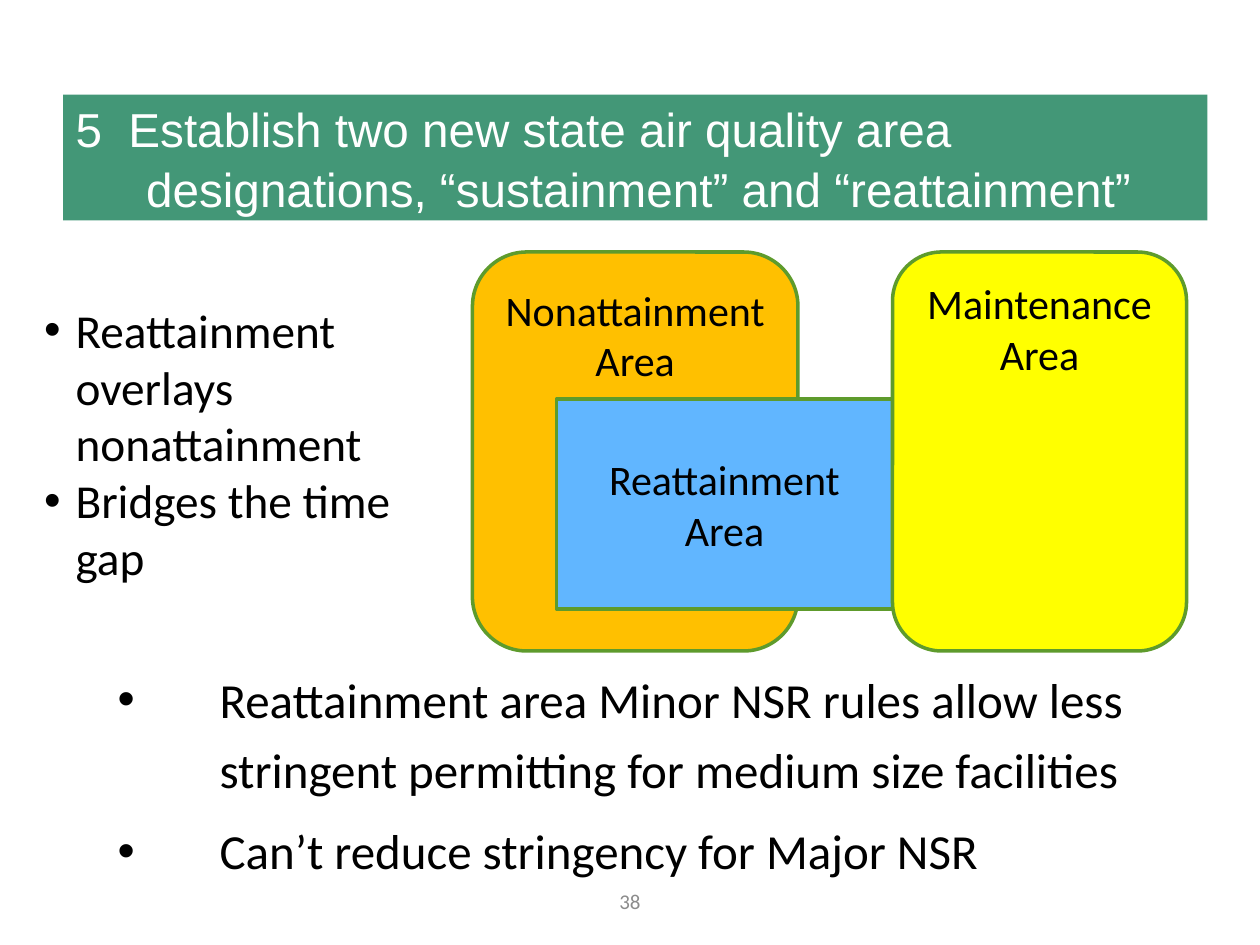
from lxml import etree
from pptx import Presentation
from pptx.dml.color import RGBColor
from pptx.enum.shapes import MSO_SHAPE
from pptx.enum.text import MSO_ANCHOR, MSO_AUTO_SIZE, PP_ALIGN
from pptx.oxml.ns import qn
from pptx.util import Inches, Pt

RECT, ROUND = MSO_SHAPE.RECTANGLE, MSO_SHAPE.ROUNDED_RECTANGLE
TOP, MIDDLE = MSO_ANCHOR.TOP, MSO_ANCHOR.MIDDLE
LEFT, CENTER = PP_ALIGN.LEFT, PP_ALIGN.CENTER
FIXED = MSO_AUTO_SIZE.NONE

BLACK = RGBColor(0x00, 0x00, 0x00)
WHITE = RGBColor(0xFF, 0xFF, 0xFF)
GRAY = RGBColor(0x8C, 0x8C, 0x8C)
GREEN = RGBColor(0x43, 0x97, 0x77)
LEAF = RGBColor(0x5E, 0x9B, 0x2C)
ORANGE = RGBColor(0xFF, 0xC0, 0x00)
YELLOW = RGBColor(0xFF, 0xFF, 0x00)
BLUE = RGBColor(0x61, 0xB6, 0xFF)


class Deck:
    """Holds the style and the current slide, laid out on a 120 by 90 grid."""

    def __init__(self):
        self.prs = Presentation()
        self.prs.slide_width, self.prs.slide_height = Inches(10), Inches(7.5)
        self.cell = self.prs.slide_width / 120
        self.slide = self.prs.slides.add_slide(self.prs.slide_layouts[3])

    def span(self, box):
        return [round(n * self.cell) for n in box]

    def place(self, shape, box):
        for name, size in zip(("left", "top", "width", "height"), self.span(box)):
            setattr(shape, name, size)

    def label(self, shape, lines, size, font="Calibri", color=BLACK, anchor=MIDDLE,
              inset=0.05, level=0, hang=None, bullet=None, **form):
        frame = shape.text_frame
        setup = {"word_wrap": True, "auto_size": FIXED,
                 "vertical_anchor": anchor, "margin_top": Inches(inset)}
        for name, value in setup.items():
            setattr(frame, name, value)
        frame.text = "\n".join(lines)
        look = {"alignment": CENTER, "space_before": Pt(0), "level": level} | form
        for para in frame.paragraphs:
            for name, value in look.items():
                setattr(para, name, value)
            for name, value in {"name": font, "size": Pt(size)}.items():
                setattr(para.runs[0].font, name, value)
            para.runs[0].font.color.rgb = color
            props = para._p.get_or_add_pPr()
            if hang:
                props.set("marL", str(Inches(hang[0])))
                props.set("indent", str(Inches(hang[1])))
            if bullet:
                etree.SubElement(props, qn("a:buFont"), typeface="Arial")
                etree.SubElement(props, qn("a:buChar"), char=bullet)

    def title(self, text, box, fill):
        shape = self.slide.shapes.title
        self.place(shape, box)
        shape.fill.solid()
        shape.fill.fore_color.rgb = fill
        self.label(shape, [text], 27.2, "Arial", WHITE, alignment=LEFT,
                   hang=(0.56, -0.56), line_spacing=1.05)

    def points(self, slot, lines, box, size, **form):
        shape = self.slide.placeholders[slot]
        self.place(shape, box)
        self.label(shape, lines, size, anchor=TOP, alignment=LEFT, bullet="•", **form)

    def area(self, text, box, fill, kind=ROUND, **form):
        shape = self.slide.shapes.add_shape(kind, *self.span(box))
        shape.shadow.inherit = False
        shape.fill.solid()
        shape.fill.fore_color.rgb = fill
        shape.line.color.rgb = LEAF
        shape.line.width = Pt(2)
        self.label(shape, [text], 24, **form)

    def number(self, text, box):
        shape = self.slide.shapes.add_textbox(*self.span(box))
        self.label(shape, [text], 12, color=GRAY)


def main():
    deck = Deck()
    deck.title("5  Establish two new state air quality area designations, "
               "“sustainment” and “reattainment”", (6, 9, 109, 12), GREEN)
    deck.points(1, ["Reattainment overlays nonattainment", "Bridges the time gap"],
                (3, 24, 40, 37), 27, inset=0.39, hang=(0.25, -0.25))
    deck.points(2, ["Reattainment area Minor NSR rules allow less stringent "
                    "permitting for medium size facilities",
                    "Can’t reduce stringency for Major NSR"],
                (4, 62, 106, 22.5), 28, level=1, hang=(1.31, -0.81),
                line_spacing=1.2, space_after=Pt(6))
    deck.area("Nonattainment Area", (45, 24, 31, 38), ORANGE, anchor=TOP, inset=0.13)
    deck.area("Reattainment Area", (53, 38, 32, 20), BLUE, RECT)
    deck.area("Maintenance Area", (85, 24, 28, 38), YELLOW, anchor=TOP, inset=0.09)
    deck.number("38", (41, 83.4, 38, 4.8))
    deck.prs.save("out.pptx")


if __name__ == "__main__":
    main()
